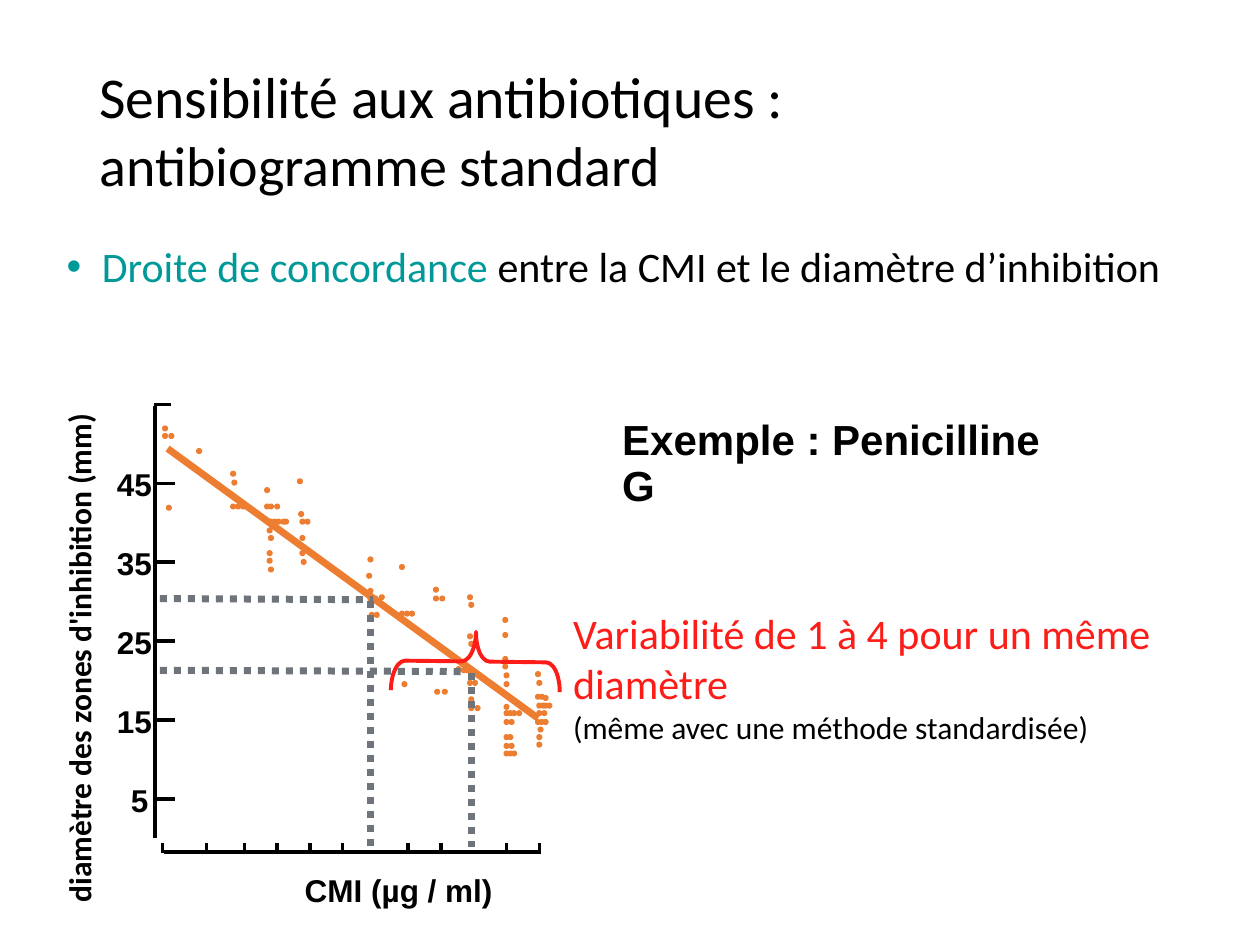
from lxml.etree import SubElement
from pptx import Presentation
from pptx.dml.color import RGBColor
from pptx.enum.dml import MSO_LINE
from pptx.enum.shapes import MSO_CONNECTOR, MSO_SHAPE
from pptx.enum.text import MSO_ANCHOR
from pptx.oxml.ns import qn
from pptx.util import Inches, Pt

COLORS = {"black": "000000", "teal": "009999", "red": "FC1D18",
          "dot": "FE9B03", "orange": "ED7D31", "grey": "6E747A"}

# Each paragraph is a list of runs: (text, size, colour)
TITLE = [[("Sensibilité aux antibiotiques :\v", 33, "black"),
          ("antibiogramme standard", 32, "black")]]
BODY = [[("Droite de concordance", 24, "teal"),
         (" entre la CMI et le diamètre d’inhibition", 24, "black")]]
NOTE = [[("Variabilité de 1 à 4 pour un même diamètre", 24, "red")],
        [("(même avec une méthode standardisée)", 18, "black")]]
EXAMPLE = [[("Exemple : Penicilline G", 24, "black")]]
X_TITLE = [[("CMI (µg / ml)", 18, "black")]]
Y_TITLE = [[("diamètre des zones d'inhibition (mm)", 18, "black")]]
Y_LABELS = ["45", "35", "25", "15", "5"]

# Dots: (top, left positions), from left cluster to right cluster
DOTS = [
    (3.39, [1.3]), (3.45, [1.3, 1.35]), (4.02, [1.33]), (3.57, [1.57]),
    (3.75, [1.84]), (3.82, [1.85]), (4.01, [1.84, 1.88, 1.92]),
    (3.88, [2.11]), (4.01, [2.11, 2.14, 2.19]),
    (4.13, [2.14, 2.17, 2.2, 2.24, 2.26]), (4.2, [2.13]), (4.26, [2.14]),
    (4.38, [2.13]), (4.44, [2.13]), (4.51, [2.14]),
    (3.81, [2.37]), (4.07, [2.38]), (4.13, [2.39, 2.43]), (4.26, [2.39]),
    (4.38, [2.39]), (4.45, [2.4]),
    (4.43, [2.93]), (4.56, [2.92]), (4.68, [2.93]), (4.74, [2.93, 2.97]),
    (4.73, [3.02]), (4.87, [2.94, 2.98]),
    (4.49, [3.18]), (4.86, [3.18, 3.22, 3.26]), (5.42, [3.2]),
    (4.67, [3.45]), (4.74, [3.45, 3.5]), (5.1, [3.45]), (5.48, [3.46, 3.52]),
    (4.73, [3.72]), (4.79, [3.73]), (5.04, [3.72]), (5.1, [3.73]),
    (5.3, [3.63]), (5.31, [3.67, 3.7]), (5.34, [3.74]), (5.41, [3.72, 3.76]),
    (5.54, [3.73]), (5.61, [3.73, 3.78]),
    (4.91, [4]), (5.03, [4]), (5.22, [4]), (5.28, [4]), (5.35, [4.01]),
    (5.42, [4.01]), (5.6, [4.01]), (5.65, [4.01, 4.04, 4.07, 4.11]),
    (5.72, [4.01, 4.05]), (5.84, [4.01, 4.04]), (5.91, [4.01, 4.05]),
    (5.97, [4.01, 4.04, 4.07]),
    (5.34, [4.26]), (5.41, [4.27]), (5.52, [4.26, 4.29]), (5.53, [4.32]),
    (5.59, [4.27, 4.3, 4.32, 4.35]), (5.65, [4.27, 4.31]),
    (5.72, [4.26, 4.29, 4.32]), (5.78, [4.28]), (5.84, [4.27]), (5.9, [4.27]),
]
DOT_SIZE = 0.02

TREND = (1.33, 3.56, 4.27, 5.7)
GUIDES = [(2.94, 4.77, 2.94, 6.73), (3.74, 5.34, 3.74, 6.72),
          (1.27, 5.32, 3.71, 5.33), (1.27, 4.75, 2.96, 4.76)]
Y_AXIS = (1.23, 3.22, 1.23, 6.65)
X_AXIS = (1.3, 6.76, 4.29, 6.76)
Y_TOP, Y_STEP = 3.21, 0.626
X_TICKS = [1.29, 1.64, 1.94] + [2.2 + 0.26 * i for i in (0, 1, 2, 4, 5, 7, 8)]

prs = Presentation()
prs.slide_width, prs.slide_height = Inches(10), Inches(7.5)
s = prs.slides.add_slide(prs.slide_layouts[6])


def rgb(name):
    return RGBColor.from_string(COLORS[name])


def add_text(paragraphs, x, y, w, h, font="Calibri", bold=False,
             spacing=None, anchor=MSO_ANCHOR.TOP, rotation=0, wrap=True):
    sp = s.shapes.add_textbox(Inches(x), Inches(y), Inches(w), Inches(h))
    sp.rotation = rotation
    tf = sp.text_frame
    tf.word_wrap = wrap
    tf.vertical_anchor = anchor
    for i, runs in enumerate(paragraphs):
        p = tf.paragraphs[0] if i == 0 else tf.add_paragraph()
        p.line_spacing = spacing
        for text, size, color in runs:
            r = p.add_run()
            r.text = text.rstrip("\v")
            r.font.name, r.font.size, r.font.bold = font, Pt(size), bold
            r.font.color.rgb = rgb(color)
            if text.endswith("\v"):
                p.add_line_break()
    return tf


def add_bullet(p, indent):
    pPr = p._p.get_or_add_pPr()
    pPr.set("marL", str(Inches(indent)))
    pPr.set("indent", str(-Inches(indent)))
    SubElement(pPr, qn("a:buFont")).set("typeface", "Arial")
    SubElement(pPr, qn("a:buChar")).set("char", "•")


def add_line(x1, y1, x2, y2, color="black", width=2, dash=None):
    c = s.shapes.add_connector(MSO_CONNECTOR.STRAIGHT, Inches(x1), Inches(y1),
                               Inches(x2), Inches(y2))
    c.line.color.rgb = rgb(color)
    c.line.width = Pt(width)
    if dash:
        c.line.dash_style = dash
    SubElement(c._element.spPr, qn("a:effectLst"))


def add_outline(kind, x, y, w, h, color, width, fill=None):
    sp = s.shapes.add_shape(kind, Inches(x), Inches(y), Inches(w), Inches(h))
    sp.shadow.inherit = False
    if fill:
        sp.fill.solid()
        sp.fill.fore_color.rgb = rgb(fill)
    else:
        sp.fill.background()
    sp.line.color.rgb = rgb(color)
    sp.line.width = Pt(width)
    return sp


add_text(TITLE, 0.69, 0.3, 8.62, 1.45, anchor=MSO_ANCHOR.MIDDLE)
body = add_text(BODY, 0.43, 1.86, 9, 4.82)
add_bullet(body.paragraphs[0], 0.28)

for top, lefts in DOTS:
    for left in lefts:
        add_outline(MSO_SHAPE.OVAL, left, top, DOT_SIZE, DOT_SIZE,
                    "orange", 2, fill="dot")
add_line(*TREND, color="orange", width=4)

add_line(*Y_AXIS)
add_line(1.22, Y_TOP, 1.36, Y_TOP)
add_line(*X_AXIS)
for x in X_TICKS:
    add_line(x, 6.77, x, 6.69)
for guide in GUIDES:
    add_line(*guide, color="grey", width=4, dash=MSO_LINE.ROUND_DOT)

label = {"font": "Arial", "bold": True, "spacing": 0.9}
for i, value in enumerate(Y_LABELS, start=1):
    y = Y_TOP + i * Y_STEP
    add_line(1.24, y, 1.39, y)
    x, w = (0.83, 0.48) if len(value) == 2 else (0.94, 0.34)
    add_text([[(value, 18, "black")]], x, y - 0.16, w, 0.37, wrap=False, **label)

add_text(EXAMPLE, 4.84, 3.28, 3.7, 0.82, **label)
add_text(X_TITLE, 2.32, 6.9, 1.69, 0.37, wrap=False, **label)
add_text(Y_TITLE, -1.66, 4.77, 4.61, 0.37, bold=True, spacing=0.9, rotation=270)

brace = add_outline(MSO_SHAPE.RIGHT_BRACE, 3.54, 4.58, 0.47, 1.34, "red", 2.25)
brace.adjustments[0], brace.adjustments[1] = 0.236, 0.5
brace.rotation = 90.7
brace._element.spPr.find(qn("a:xfrm")).set("flipH", "1")

add_text(NOTE, 4.45, 4.77, 5.04, 1.2)

prs.save("out.pptx")
